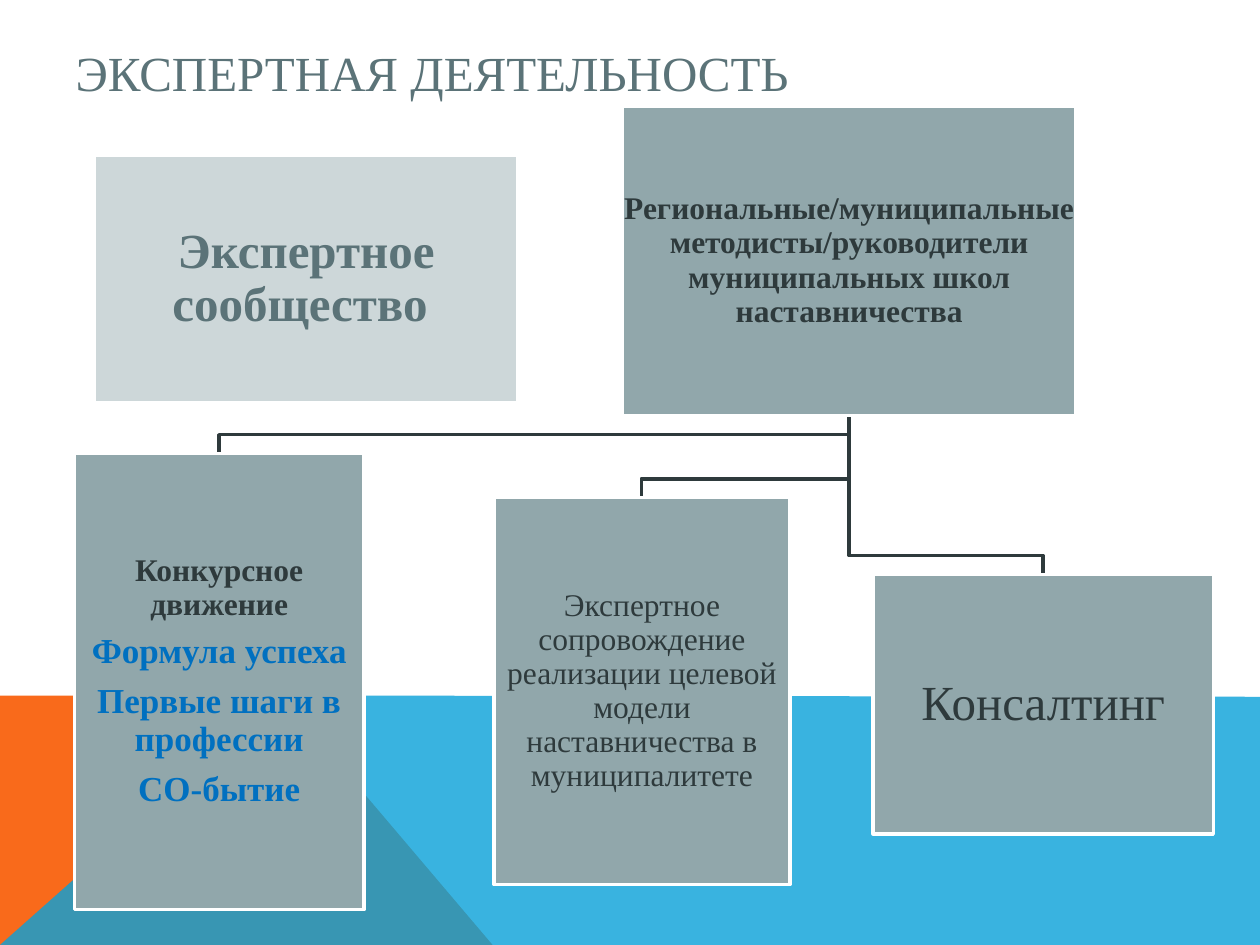
from pptx import Presentation
from pptx import util as u
from pptx.dml.color import RGBColor
from pptx.enum import shapes, text
from pptx.oxml.ns import qn
from lxml import etree

PX = u.Inches(1) // 100
FONT = "Times New Roman"
WHITE = RGBColor(0xFF, 0xFF, 0xFF)
ORANGE = RGBColor(0xF9, 0x6A, 0x1B)
SKY = RGBColor(0x08, 0xA1, 0xD9)
SLATE = RGBColor(0x5B, 0x73, 0x78)
DARK = RGBColor(0x2E, 0x3A, 0x3C)
GREY = RGBColor(0x91, 0xA7, 0xAB)
PALE = RGBColor(0xCD, 0xD7, 0xD9)
BLUE = RGBColor(0x00, 0x70, 0xC0)

TITLE = (50, 30, 900, 54)
FOOT = (0, 552, 1000, 198)
ROOT = (494, 84, 360, 246)
GROUP = (75, 123, 336, 197)
CONTEST = (59, 360, 230, 362)
SUPPORT = (392, 395, 235, 307)
CONSULT = (693, 456, 270, 206)


def style(run, size, color, bold=False):
    font = run.font
    font.name, font.size, font.bold = FONT, u.Pt(size), bold
    font.color.rgb = color


def outline(slide, points, close):
    build = slide.shapes.build_freeform(*points[0], scale=PX)
    build.add_line_segments(points[1:], close=close)
    shape = build.convert_to_shape()
    shape.shadow.inherit = False
    return shape


def add_title(slide, box):
    title = slide.shapes.title
    title.left, title.top, title.width, title.height = [n * PX for n in box]
    frame = title.text_frame
    frame.text = "ЭКСПЕРТНАЯ ДЕЯТЕЛЬНОСТЬ"
    frame.vertical_anchor = text.MSO_ANCHOR.MIDDLE
    frame.paragraphs[0].alignment = text.PP_ALIGN.LEFT
    style(frame.paragraphs[0].runs[0], 28, SLATE)


def add_foot(slide, box):
    x, y, w, h = box
    low, peak = y + h, (x + 223, y)
    wedge = [(x, low), (x, y), peak, (x + 391, low)]
    band = [(x, low), peak, (x + w, y + 1), (x + w, low)]
    for points, color, alpha in ((wedge, ORANGE, 100), (band, SKY, 80)):
        shape = outline(slide, points, True)
        shape.fill.solid()
        shape.fill.fore_color.rgb = color
        shape.line.fill.background()
        tint = shape.fill._xPr.find(qn("a:solidFill"))[0]
        etree.SubElement(tint, qn("a:alpha"), val=str(alpha * 1000))


def add_link(slide, start, end):
    x, y = start[0] + start[2] // 2, start[1] + start[3]
    to, top = end[0] + end[2] // 2, end[1]
    turn = top - 15
    shape = outline(slide, [(x, y), (x, turn), (to, turn), (to, top)], False)
    shape.fill.background()
    shape.line.color.rgb = DARK
    shape.line.width = u.Pt(2)


def add_card(slide, box, fill, inset, lines):
    card = slide.shapes.add_shape(
        shapes.MSO_SHAPE.RECTANGLE, *[n * PX for n in box])
    card.shadow.inherit = False
    card.fill.solid()
    card.fill.fore_color.rgb = fill
    card.line.color.rgb = WHITE
    card.line.width = u.Pt(2)
    frame = card.text_frame
    frame.word_wrap = True
    frame.vertical_anchor = text.MSO_ANCHOR.MIDDLE
    frame.margin_left = frame.margin_right = inset * PX
    frame.margin_top = frame.margin_bottom = inset * PX
    frame.text = "\n".join(line[0] for line in lines)
    for para, (_, size, color, bold) in zip(frame.paragraphs, lines):
        para.alignment = text.PP_ALIGN.CENTER
        para.line_spacing = 0.9
        para.space_after = u.Pt(size * 0.35)
        style(para.runs[0], size, color, bold)


def add_tree(slide):
    for child in (CONSULT, SUPPORT, CONTEST):
        add_link(slide, ROOT, child)
    add_card(slide, ROOT, GREY, 1, [
        ("Региональные/муниципальные методисты/руководители "
         "муниципальных школ наставничества", 18, DARK, True)])
    add_card(slide, CONTEST, GREY, 1, [
        ("Конкурсное движение", 18, DARK, True),
        ("Формула успеха", 20, BLUE, True),
        ("Первые шаги в профессии", 20, BLUE, True),
        ("СО-бытие", 20, BLUE, True)])
    add_card(slide, SUPPORT, GREY, 1, [
        ("Экспертное сопровождение реализации целевой модели "
         "наставничества в муниципалитете", 18, DARK, False)])
    add_card(slide, CONSULT, GREY, 2, [("Консалтинг", 28, DARK, False)])
    add_card(slide, GROUP, PALE, 2, [
        ("Экспертное сообщество ", 28, SLATE, True)])


def main():
    deck = Presentation()
    deck.slide_width, deck.slide_height = 1000 * PX, 750 * PX
    slide = deck.slides.add_slide(deck.slide_layouts[5])
    add_foot(slide, FOOT)
    add_title(slide, TITLE)
    add_tree(slide)
    deck.save("out.pptx")


if __name__ == "__main__":
    main()
